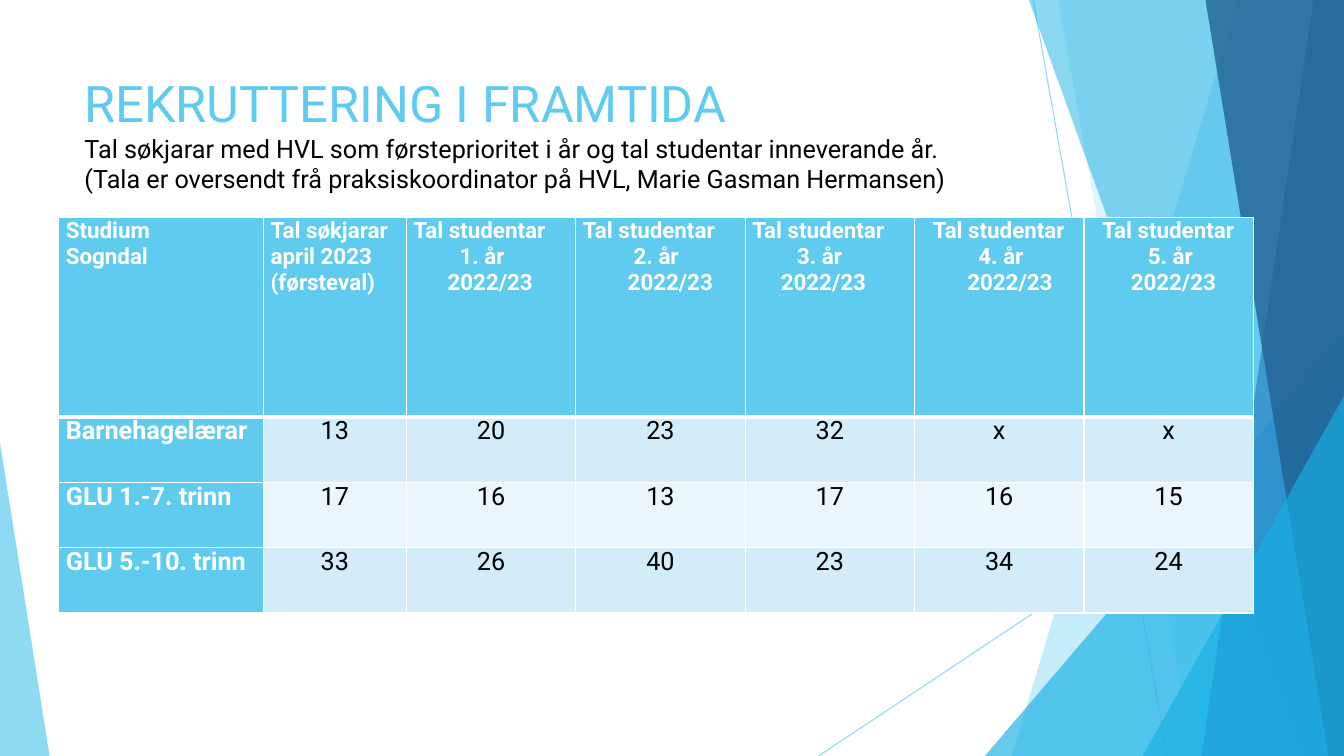
from lxml import etree
from pptx import Presentation
from pptx.dml import color
from pptx.enum import shapes, text
from pptx.oxml import ns
from pptx.util import Cm, Pt

FONT = "Roboto"
SKY, CYAN, BLUE, NAVY = "5FCBEF", "17B0E4", "2E83C3", "226292"
WHITE, BLACK = "FFFFFF", "000000"
WIDTH, HEIGHT = 33.87, 19.05

RAYS = [((26.04, 0), (29.42, HEIGHT)), ((WIDTH, 10.24), (20.63, HEIGHT))]
BANDS = [
    (31.2, 25.5, SKY, 36),
    (26.67, 30.05, SKY, 20),
    (25.93, 32.8, CYAN, 50),
    (33.1, 30.28, BLUE, 70),
    (30.38, 33.48, NAVY, 80),
]
TRIANGLES = [
    (24.82, 8.46, 9.05, 1, CYAN, 66),
    (28.8, 9.98, 5.07, 1, CYAN, 66),
    (0, 11.15, 1.25, 0, SKY, 70),
]
TITLE = [
    ("REKRUTTERING I FRAMTIDA", 36, SKY),
    ("Tal søkjarar med HVL som førsteprioritet i år og tal studentar inneverande år.", 18, BLACK),
    ("(Tala er oversendt frå praksiskoordinator på HVL, Marie Gasman Hermansen)", 18, BLACK),
]
COLUMNS = [5.16, 3.6] + [4.27] * 5
ROWS = [5.02] + [1.65] * 3
YEAR_INDENTS = [
    (0, 1.16, 0.86),
    (0, 1.28, 1.13),
    (0, 1.13, 0.72),
    (0.28, 1.43, 1.15),
    (0.28, 1.43, 1.0),
]
STUDIES = [
    ("Barnehagelærar", "13", "20", "23", "32", "x", "x"),
    ("GLU 1.-7. trinn", "17", "16", "13", "17", "16", "15"),
    ("GLU 5.-10. trinn", "33", "26", "40", "23", "34", "24"),
]


def rgb(code):
    return color.RGBColor.from_string(code)


def set_alpha(fill_element, percent):
    tone = fill_element.find(".//" + ns.qn("a:srgbClr"))
    etree.SubElement(tone, ns.qn("a:alpha"), val=str(percent * 1000))


def paint(shape, code, percent):
    shape.shadow.inherit = False
    shape.fill.solid()
    shape.fill.fore_color.rgb = rgb(code)
    set_alpha(shape._element.spPr.find(ns.qn("a:solidFill")), percent)
    shape.line.fill.background()


def add_ray(page, start, end):
    ray = page.shapes.add_connector(
        shapes.MSO_CONNECTOR.STRAIGHT, *[Cm(value) for value in start + end])
    ray.line.color.rgb = rgb(SKY)
    ray.line.width = Pt(0.75)
    properties = ray._element.spPr
    set_alpha(properties.find(ns.qn("a:ln")), 70)
    etree.SubElement(properties, ns.qn("a:effectLst"))


def add_band(page, top_left, bottom_left, code, percent):
    corners = [(WIDTH, 0), (WIDTH, HEIGHT), (bottom_left, HEIGHT)]
    builder = page.shapes.build_freeform(Cm(top_left), 0)
    builder.add_line_segments([(Cm(x), Cm(y)) for x, y in corners], close=True)
    paint(builder.convert_to_shape(), code, percent)


def add_triangle(page, left, top, width, apex, code, percent):
    triangle = page.shapes.add_shape(
        shapes.MSO_SHAPE.ISOSCELES_TRIANGLE,
        Cm(left), Cm(top), Cm(width), Cm(HEIGHT - top))
    triangle.adjustments[0] = apex
    paint(triangle, code, percent)


def style(para, size, code, bold=False):
    for span in para.runs:
        span.font.name = FONT
        span.font.size = Pt(size)
        span.font.bold = bold
        span.font.color.rgb = rgb(code)


def add_title(page):
    box = page.shapes.add_textbox(Cm(1.88), Cm(1.7), Cm(23.88), Cm(3.66))
    frame = box.text_frame
    frame.word_wrap = True
    frame.vertical_anchor = text.MSO_ANCHOR.TOP
    frame.text = "\n".join(line for line, size, code in TITLE)
    for para, (line, size, code) in zip(frame.paragraphs, TITLE):
        style(para, size, code)


def add_borders(cell, bottom):
    properties = cell._tc.get_or_add_tcPr()
    for index, (side, width) in enumerate(zip("LRTB", (1, 1, 1, bottom))):
        border = etree.Element(ns.qn("a:ln" + side), w=str(Pt(width)))
        fill = etree.SubElement(border, ns.qn("a:solidFill"))
        etree.SubElement(fill, ns.qn("a:srgbClr"), val=WHITE)
        properties.insert(index, border)


def fill_cell(cell, content, fill, size, code, bold, bottom=1, indents=()):
    cell.margin_left = cell.margin_right = Cm(0.18)
    cell.margin_top = cell.margin_bottom = 0
    cell.fill.solid()
    cell.fill.fore_color.rgb = rgb(fill)
    add_borders(cell, bottom)
    cell.text_frame.text = content
    for para in cell.text_frame.paragraphs:
        style(para, size, code, bold)
        if not bold:
            para.alignment = text.PP_ALIGN.CENTER
    for para, indent in zip(cell.text_frame.paragraphs, indents):
        para._p.get_or_add_pPr().set("marL", str(Cm(indent)))


def add_student_table(page):
    table = page.shapes.add_table(
        len(ROWS), len(COLUMNS), Cm(1.48), Cm(5.48),
        Cm(sum(COLUMNS)), Cm(sum(ROWS))).table
    for column, width in zip(table.columns, COLUMNS):
        column.width = Cm(width)
    for row, height in zip(table.rows, ROWS):
        row.height = Cm(height)
    headers = [("Studium\nSogndal", ()), ("Tal søkjarar april 2023\n(førsteval)", ())]
    for year, indents in enumerate(YEAR_INDENTS, 1):
        headers.append((f"Tal studentar\n{year}. år\n2022/23", indents))
    for column, (header, indents) in enumerate(headers):
        fill_cell(table.cell(0, column), header, SKY, 16, WHITE, True, 3, indents)
    for row, (study, *counts) in enumerate(STUDIES, 1):
        fill_cell(table.cell(row, 0), study, SKY, 18, WHITE, True)
        stripe = "D2ECF9" if row % 2 else "EAF6FC"
        for column, count in enumerate(counts, 1):
            fill_cell(table.cell(row, column), count, stripe, 18, BLACK, False)


def main():
    deck = Presentation()
    deck.slide_width, deck.slide_height = Cm(WIDTH), Cm(HEIGHT)
    page = deck.slides.add_slide(deck.slide_layouts[6])
    for ray in RAYS:
        add_ray(page, *ray)
    for band in BANDS[:2]:
        add_band(page, *band)
    add_triangle(page, *TRIANGLES[0])
    for band in BANDS[2:]:
        add_band(page, *band)
    for triangle in TRIANGLES[1:]:
        add_triangle(page, *triangle)
    add_title(page)
    add_student_table(page)
    deck.save("out.pptx")


if __name__ == "__main__":
    main()
